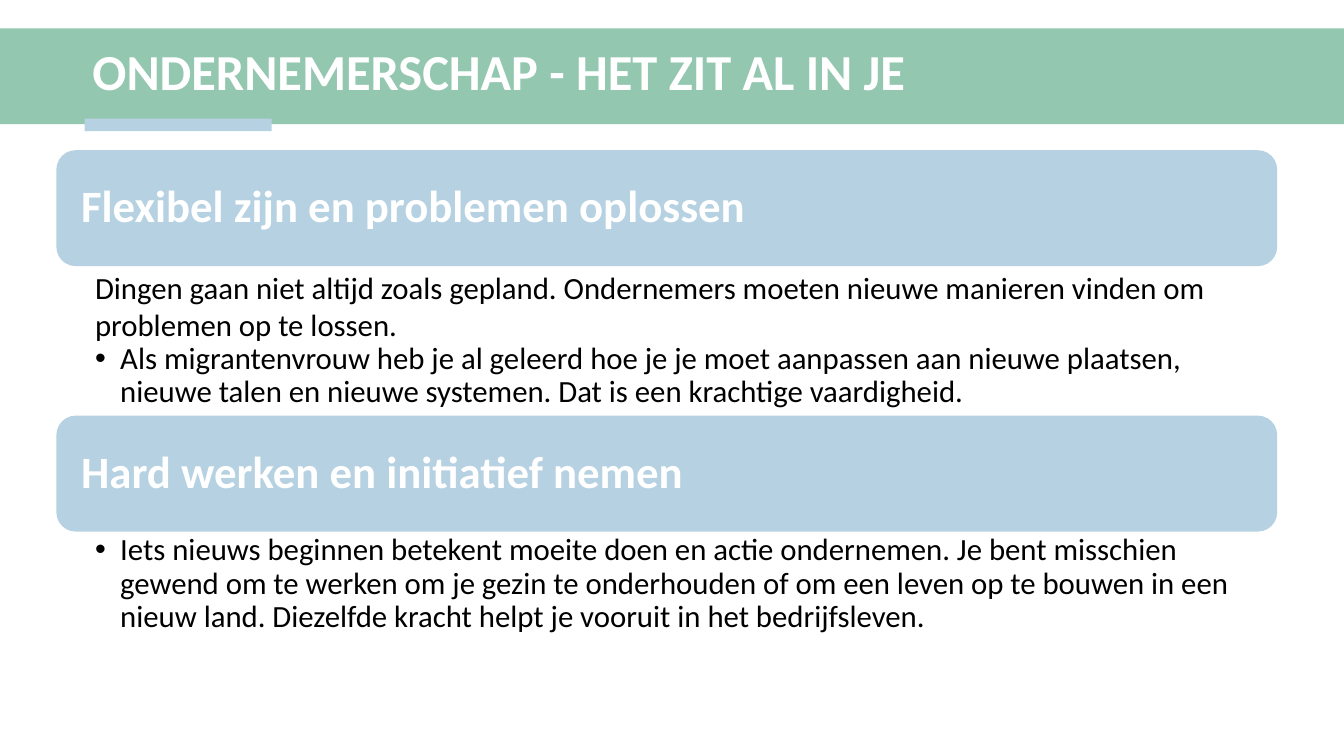
from lxml import etree
from pptx import Presentation
from pptx import util as u
from pptx.dml.color import RGBColor
from pptx.enum import shapes, text
from pptx.oxml.ns import qn

GREEN, BLUE, WHITE, BLACK = "94C7B0", "B6D1E1", "FFFFFF", "000000"
WIDTH, HEIGHT = 960, 540
HEADING_HEIGHT = 82.8
TITLE = dict(name="Calibri", size=u.Pt(36), bold=True)
HEADING = dict(name="Calibri", size=u.Pt(32), bold=True)
BODY = dict(name="Calibri", size=u.Pt(22), bold=False)

SECTIONS = [
    ("Flexibel zijn en problemen oplossen", 107.3, 107, [
        ("Dingen gaan niet altijd zoals gepland. Ondernemers moeten nieuwe manieren "
         "vinden om problemen op te lossen.", False),
        ("Als migrantenvrouw heb je al geleerd hoe je je moet aanpassen aan nieuwe "
         "plaatsen, nieuwe talen en nieuwe systemen. Dat is een krachtige vaardigheid.", True),
    ]),
    ("Hard werken en initiatief nemen", 296.9, 78, [
        ("Iets nieuws beginnen betekent moeite doen en actie ondernemen. Je bent misschien "
         "gewend om te werken om je gezin te onderhouden of om een leven op te bouwen in een "
         "nieuw land. Diezelfde kracht helpt je vooruit in het bedrijfsleven.", True),
    ]),
]


def color(value):
    """Turn a hex string into a colour."""
    return RGBColor.from_string(value)


def add_block(page, kind, box, fill):
    """Add a plain filled shape without outline or shadow."""
    block = page.shapes.add_shape(kind, *map(u.Pt, box))
    block.shadow.inherit = False
    block.fill.solid()
    block.fill.fore_color.rgb = color(fill)
    block.line.fill.background()
    return block


def set_frame(shape, anchor, insets):
    """Prepare a text frame with left, top, right and bottom insets."""
    frame = shape.text_frame
    frame.word_wrap = True
    frame.vertical_anchor = anchor
    for side, inset in zip(("left", "top", "right", "bottom"), insets):
        setattr(frame, f"margin_{side}", u.Pt(inset))
    return frame


def write(para, words, style, fill, spacing=0.9):
    """Write one left-aligned paragraph in the given style."""
    para.alignment = text.PP_ALIGN.LEFT
    para.line_spacing = spacing
    span = para.add_run()
    span.text = words
    for key, value in style.items():
        setattr(span.font, key, value)
    span.font.color.rgb = color(fill)


def add_bullet(para):
    """Give a paragraph a hanging bullet."""
    props = para._p.get_or_add_pPr()
    props.set("marL", str(u.Pt(18)))
    props.set("indent", str(-u.Pt(18)))
    etree.SubElement(props, qn("a:buFont")).set("typeface", "Arial")
    etree.SubElement(props, qn("a:buChar")).set("char", "•")


def add_header(page, left, top, width, height):
    """Draw the title band with its accent bar and title."""
    rectangle = shapes.MSO_SHAPE.RECTANGLE
    add_block(page, rectangle, (left, top, width, height), GREEN)
    add_block(page, rectangle, (left + 60.5, top + 64.5, 133.5, 9), BLUE)
    title = page.shapes.add_textbox(*map(u.Pt, (left + 59, top + 4.3, 859, 56.9)))
    frame = set_frame(title, text.MSO_ANCHOR.MIDDLE, (7.2, 3.6, 7.2, 3.6))
    write(frame.paragraphs[0], "ONDERNEMERSCHAP - HET ZIT AL IN JE", TITLE, WHITE)


def add_section(page, left, top, width, body_height, heading, lines):
    """Draw a rounded heading bar with its explanation below."""
    bar = add_block(page, shapes.MSO_SHAPE.ROUNDED_RECTANGLE,
                    (left, top, width, HEADING_HEIGHT), BLUE)
    frame = set_frame(bar, text.MSO_ANCHOR.MIDDLE, (13.7, 9.6, 13.7, 9.6))
    write(frame.paragraphs[0], heading, HEADING, WHITE)
    body = page.shapes.add_textbox(
        *map(u.Pt, (left, top + HEADING_HEIGHT, width, body_height)))
    frame = set_frame(body, text.MSO_ANCHOR.TOP, (27.6, 2, 12, 2))
    for index, (words, bulleted) in enumerate(lines):
        para = frame.add_paragraph() if index else frame.paragraphs[0]
        if bulleted:
            add_bullet(para)
        write(para, words, BODY, BLACK, 0.9 if bulleted else 1.0)


def main():
    """Build and save the slide."""
    deck = Presentation()
    deck.slide_width, deck.slide_height = u.Pt(WIDTH), u.Pt(HEIGHT)
    page = deck.slides.add_slide(deck.slide_layouts[6])
    add_header(page, 0, 20.2, WIDTH, 68.4)
    for heading, top, body_height, lines in SECTIONS:
        add_section(page, 40.3, top, 872, body_height, heading, lines)
    deck.save("out.pptx")


if __name__ == "__main__":
    main()
